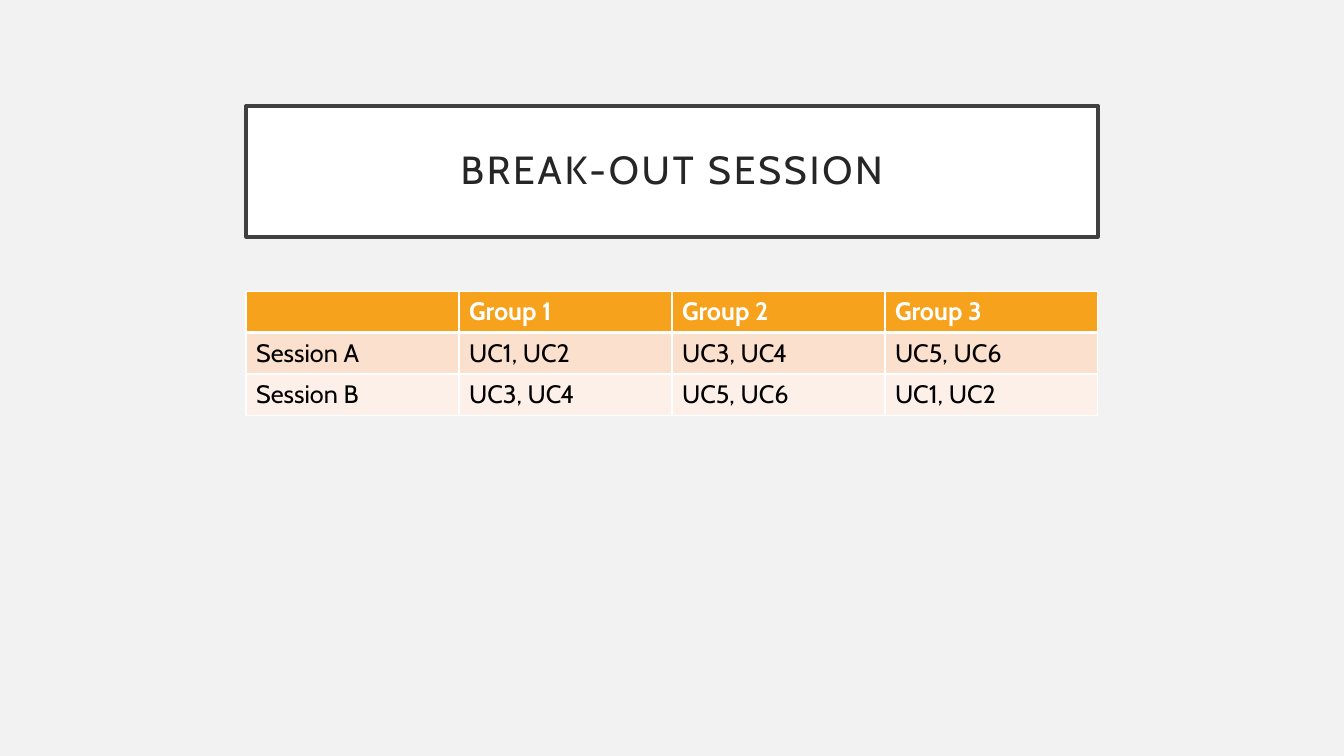
from dataclasses import dataclass

from lxml.etree import SubElement
from pptx import Presentation
from pptx.dml.color import RGBColor
from pptx.enum.shapes import MSO_SHAPE
from pptx.enum.text import MSO_ANCHOR, PP_ALIGN
from pptx.oxml.ns import qn
from pptx.slide import Slide
from pptx.table import _Cell
from pptx.text.text import Font
from pptx.util import Emu, Pt

PX = 9144  # one hundredth of an inch
FONT = "Cabin"
COLOURS = {
    "background": "F2F2F2",
    "white": "FFFFFF",
    "frame": "404040",
    "title": "262626",
    "header": "F6A21D",
    "band_dark": "FBE0CD",
    "band_light": "FDF0E8",
    "body": "000000",
}
LEFT, WIDTH = 244, 845
TITLE_TOP, TITLE_HEIGHT, TITLE_INSET = 105, 130, 20
TABLE_TOP, ROW_HEIGHT = 289, 41


@dataclass(frozen=True)
class ScheduleRow:
    texts: tuple[str, ...]
    fill: str
    colour: str = "body"
    bold: bool = False
    top_border: int = 1
    bottom_border: int = 1


SCHEDULE = (
    ScheduleRow(("", "Group 1", "Group 2", "Group 3"), "header", "white",
                bold=True, bottom_border=3),
    ScheduleRow(("Session A", "UC1, UC2", "UC3, UC4", "UC5, UC6"), "band_dark",
                top_border=3),
    ScheduleRow(("Session B", "UC3, UC4", "UC5, UC6", "UC1, UC2"), "band_light"),
)


def px(length: int) -> Emu:
    return Emu(length * PX)


def rgb(name: str) -> RGBColor:
    return RGBColor.from_string(COLOURS[name])


def style_font(font: Font, size: int, colour: str, bold: bool = False) -> None:
    font.name = FONT
    font.size = Pt(size)
    font.bold = bold
    font.color.rgb = rgb(colour)


def add_title(slide: Slide, text: str) -> None:
    shape = slide.shapes.add_shape(
        MSO_SHAPE.RECTANGLE, px(LEFT), px(TITLE_TOP), px(WIDTH), px(TITLE_HEIGHT))
    shape.shadow.inherit = False
    shape.fill.solid()
    shape.fill.fore_color.rgb = rgb("white")
    shape.line.color.rgb = rgb("frame")
    shape.line.width = Pt(2.5)

    frame = shape.text_frame
    frame.text = text
    frame.word_wrap = True
    frame.vertical_anchor = MSO_ANCHOR.MIDDLE
    frame.margin_left = frame.margin_right = px(TITLE_INSET)
    frame.margin_top = frame.margin_bottom = px(TITLE_INSET)
    paragraph = frame.paragraphs[0]
    paragraph.alignment = PP_ALIGN.CENTER
    paragraph.line_spacing = 0.9
    run = paragraph.runs[0]
    style_font(run.font, 28, "title")
    run.font._element.set("spc", "200")


def add_borders(cell: _Cell, row: ScheduleRow) -> None:
    """Draw white cell borders; call before filling, as the schema orders it."""
    properties = cell._tc.get_or_add_tcPr()
    widths = {"lnL": 1, "lnR": 1, "lnT": row.top_border, "lnB": row.bottom_border}
    for side, width in widths.items():
        line = SubElement(properties, qn(f"a:{side}"), w=str(Pt(width)))
        fill = SubElement(line, qn("a:solidFill"))
        SubElement(fill, qn("a:srgbClr"), val=COLOURS["white"])


def add_schedule(slide: Slide, rows: tuple[ScheduleRow, ...]) -> None:
    table = slide.shapes.add_table(
        len(rows), len(rows[0].texts), px(LEFT), px(TABLE_TOP),
        px(WIDTH), px(ROW_HEIGHT * len(rows))).table
    for row_index, row in enumerate(rows):
        table.rows[row_index].height = px(ROW_HEIGHT)
        for column_index, text in enumerate(row.texts):
            cell = table.cell(row_index, column_index)
            add_borders(cell, row)
            cell.fill.solid()
            cell.fill.fore_color.rgb = rgb(row.fill)
            cell.text_frame.text = text
            for run in cell.text_frame.paragraphs[0].runs:
                style_font(run.font, 18, row.colour, row.bold)


def main() -> None:
    presentation = Presentation()
    presentation.slide_width = px(1333)
    presentation.slide_height = px(750)
    slide = presentation.slides.add_slide(presentation.slide_layouts[6])
    slide.background.fill.solid()
    slide.background.fill.fore_color.rgb = rgb("background")
    add_title(slide, "BREAK-OUT SESSION")
    add_schedule(slide, SCHEDULE)
    presentation.save("out.pptx")


if __name__ == "__main__":
    main()
